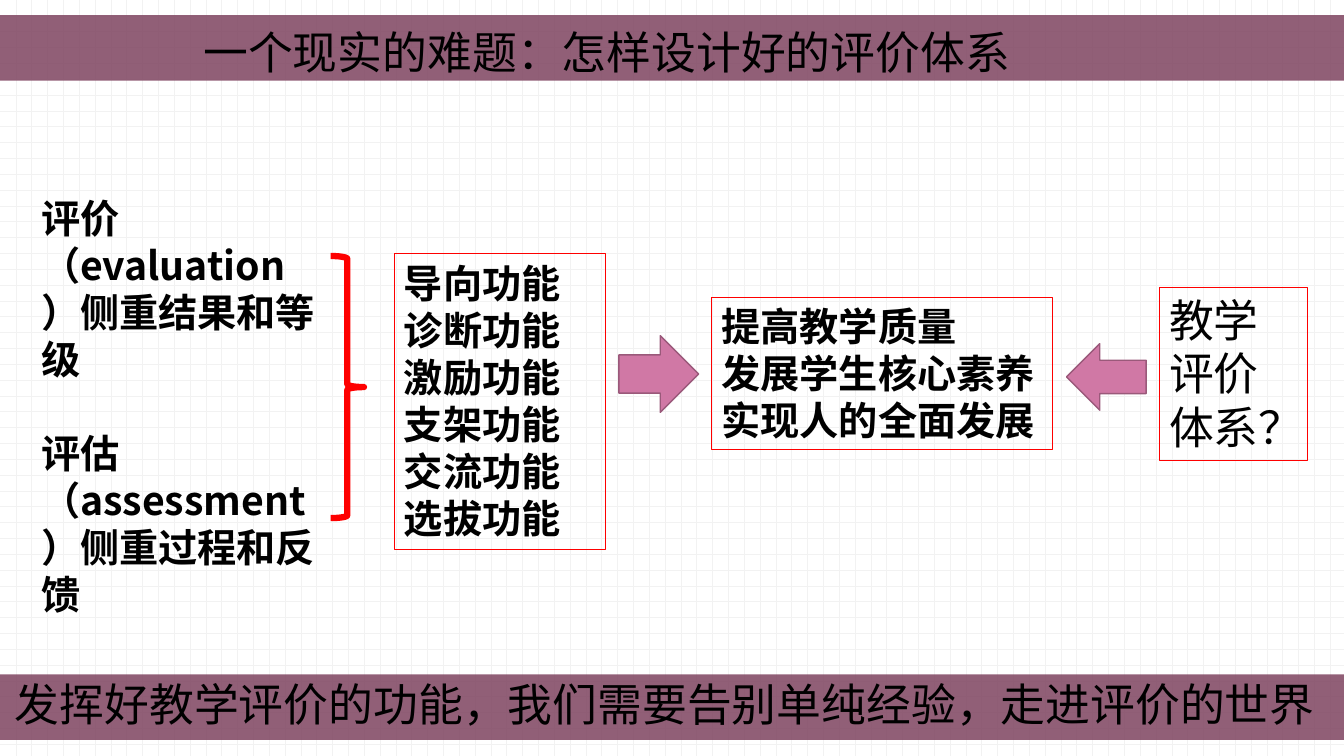
from pptx import Presentation
from pptx.dml.color import RGBColor
from pptx.enum.dml import MSO_PATTERN
from pptx.enum.shapes import MSO_SHAPE
from pptx.enum.text import MSO_ANCHOR, MSO_AUTO_SIZE, PP_ALIGN
from pptx.oxml.ns import qn
from pptx.util import Pt
from lxml.etree import SubElement

PLUM = RGBColor(0x7E, 0x44, 0x60)
PINK = RGBColor(0xD0, 0x78, 0xA5)
MAUVE = RGBColor(0x9A, 0x59, 0x7A)
RED = RGBColor(0xFE, 0x00, 0x00)
BLACK = RGBColor(0x00, 0x00, 0x00)
WHITE = RGBColor(0xFF, 0xFF, 0xFF)
GRID = RGBColor(0xF2, 0xF2, 0xF2)
NOTO = "Noto Sans CJK SC"
QUICKSAND = "Quicksand"
LEADING = 1.2


class SlideBuilder:
    def __init__(self, slide):
        self.slide = slide

    def background(self):
        fill = self.slide.background.fill
        fill.patterned()
        fill.pattern = MSO_PATTERN.DOTTED_GRID
        fill.fore_color.rgb = GRID
        fill.back_color.rgb = WHITE

    def shape(self, kind, box, fill=None, line=None, weight=0.75):
        sp = self.slide.shapes.add_shape(kind, *map(Pt, box))
        sp.shadow.inherit = False
        if fill is None:
            sp.fill.background()
        else:
            sp.fill.solid()
            sp.fill.fore_color.rgb = fill
        if line is None:
            sp.line.fill.background()
        else:
            sp.line.color.rgb = line
            sp.line.width = Pt(weight)
        return sp

    def band(self, top):
        sp = self.shape(MSO_SHAPE.RECTANGLE, (0, top, 960, 46.8), PLUM)
        color = sp.element.spPr.find(qn("a:solidFill"))[0]
        SubElement(color, qn("a:alpha"), val="85000")

    def arrow(self, box, rotation=0):
        sp = self.shape(MSO_SHAPE.RIGHT_ARROW, box, PINK, MAUVE, 1)
        sp.rotation = rotation

    def framed(self, box, lines, size=28, bold=True):
        sp = self.shape(MSO_SHAPE.RECTANGLE, box, line=RED)
        self.set_text(sp, lines, size, QUICKSAND, bold)

    def text(self, box, lines, size=32, bold=False, gap=0):
        sp = self.slide.shapes.add_textbox(*map(Pt, box))
        self.set_text(sp, lines, size, NOTO, bold, gap)

    def set_text(self, sp, lines, size, font, bold, gap=0):
        tf = sp.text_frame
        tf.text = "\n".join(lines)
        tf.word_wrap = True
        tf.auto_size = MSO_AUTO_SIZE.SHAPE_TO_FIT_TEXT
        tf.vertical_anchor = MSO_ANCHOR.TOP
        for i, p in enumerate(tf.paragraphs):
            p.alignment = PP_ALIGN.LEFT
            p.line_spacing = Pt(size * LEADING)
            p.space_before = Pt(gap if i else 0)
            for r in p.runs:
                r.font.size = Pt(size)
                r.font.bold = bold
                r.font.name = font
                r.font.color.rgb = BLACK
                rPr = r._r.get_or_add_rPr()
                SubElement(rPr, qn("a:ea"), typeface=font)


def main():
    prs = Presentation()
    prs.slide_width, prs.slide_height = Pt(960), Pt(540)
    s = SlideBuilder(prs.slides.add_slide(prs.slide_layouts[6]))
    s.background()
    for top in (10.8, 481.7):
        s.band(top)

    s.text((22.3, 135.4, 213.1, 244.8),
           ["评价（evaluation）侧重结果和等级", "评估（assessment）侧重过程和反馈"],
           size=28, bold=True, gap=28 * LEADING)
    s.shape(MSO_SHAPE.RIGHT_BRACE, (236.2, 182.9, 23.8, 187.2), line=RED, weight=4.5)
    functions = ["导向", "诊断", "激励", "支架", "交流", "选拔"]
    s.framed((281.5, 181.4, 151.2, 211), [f"{name}功能" for name in functions])
    s.arrow((442.1, 239.8, 56.9, 54.7))
    s.framed((508.3, 212.4, 243.4, 108.7),
             ["提高教学质量", "发展学生核心素养", "实现人的全面发展"])
    s.arrow((761.8, 245.5, 56.9, 47.5), rotation=180)
    s.framed((828, 205.2, 105.8, 123.8), ["教学评价体系？"], size=32, bold=False)

    s.text((3.6, 479.5, 952.6, 46.1),
           ["发挥好教学评价的功能，我们需要告别单纯经验，走进评价的世界"])
    s.text((138.2, 14.4, 641.5, 46.1), ["一个现实的难题：怎样设计好的评价体系"])
    prs.save("out.pptx")


if __name__ == "__main__":
    main()
